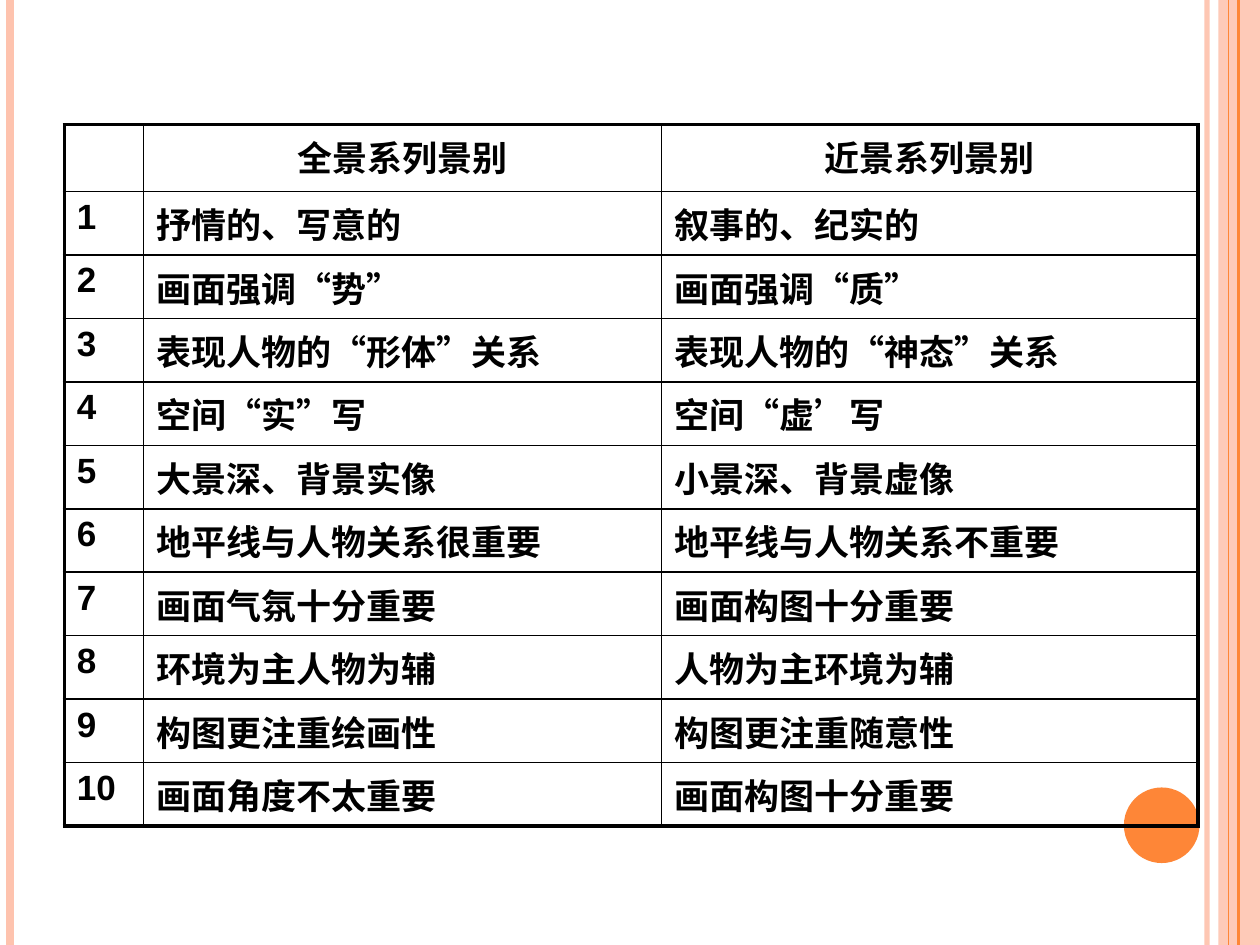
from lxml.etree import SubElement
from pptx import Presentation
from pptx.dml.color import RGBColor
from pptx.enum.lang import MSO_LANGUAGE_ID
from pptx.enum.shapes import MSO_CONNECTOR, MSO_SHAPE
from pptx.enum.text import PP_ALIGN
from pptx.oxml.ns import qn
from pptx.util import Inches, Pt

COLORS = {"peach": "FEC3AE", "orange": "FE8637", "black": "000000"}
THICK, THIN = 2.25, 1

presentation = Presentation()
presentation.slide_width, presentation.slide_height = Inches(10), Inches(7.5)
slide = presentation.slides.add_slide(presentation.slide_layouts[6])
slide_height = presentation.slide_height


def write(cell, text, size=20, color="black", bold=True, align=PP_ALIGN.LEFT):
    paragraph = cell.text_frame.paragraphs[0]
    paragraph.alignment = align
    run = paragraph.add_run()
    run.text = text
    font = run.font
    font.name, font.size, font.bold = "Arial", Pt(size), bold
    font.color.rgb = RGBColor.from_string(COLORS[color])
    font.language_id = MSO_LANGUAGE_ID.SIMPLIFIED_CHINESE


def set_alpha(element, percent):
    color = next(element.iter(qn("a:srgbClr")))
    SubElement(color, qn("a:alpha")).set("val", str(percent * 1000))


# Side stripes: x position, color, width, opacity
stripes = [
    (9.58, "peach", 3, 93),
    (0.08, "peach", 4.5, 100),
    (9.83, "orange", 1.5, 100),
    (9.75, "orange", 0.75, 100),
]
band = slide.shapes.add_shape(
    MSO_SHAPE.RECTANGLE, Inches(9.67), 0, Inches(0.33), slide_height)
circle = slide.shapes.add_shape(
    MSO_SHAPE.OVAL, Inches(8.92), Inches(6.25), Inches(0.6), Inches(0.6))
for shape, color in ((band, "peach"), (circle, "orange")):
    shape.shadow.inherit = False
    shape.fill.solid()
    shape.fill.fore_color.rgb = RGBColor.from_string(COLORS[color])
    shape.line.fill.background()
set_alpha(band.fill._xPr, 87)

for x, color, width, opacity in stripes:
    stripe = slide.shapes.add_connector(
        MSO_CONNECTOR.STRAIGHT, Inches(x), 0, Inches(x), slide_height)
    stripe.line.color.rgb = RGBColor.from_string(COLORS[color])
    stripe.line.width = Pt(width)
    if opacity < 100:
        set_alpha(stripe.line._ln, opacity)
    SubElement(stripe._element.spPr, qn("a:effectLst"))

# Comparison of wide and close shots
comparison = [
    ("全景系列景别", "近景系列景别"),
    ("抒情的、写意的", "叙事的、纪实的"),
    ("画面强调“势”", "画面强调“质”"),
    ("表现人物的“形体”关系", "表现人物的“神态”关系"),
    ("空间“实”写", "空间“虚’写"),
    ("大景深、背景实像", "小景深、背景虚像"),
    ("地平线与人物关系很重要", "地平线与人物关系不重要"),
    ("画面气氛十分重要", "画面构图十分重要"),
    ("环境为主人物为辅", "人物为主环境为辅"),
    ("构图更注重绘画性", "构图更注重随意性"),
    ("画面角度不太重要", "画面构图十分重要"),
]
column_widths = [0.63, 4.11, 4.26]
last_row, last_column = len(comparison) - 1, len(column_widths) - 1
table = slide.shapes.add_table(
    len(comparison), len(column_widths),
    Inches(0.51), Inches(0.99), Inches(9), Inches(5.03)).table
table.first_row = table.horz_banding = False
for column, width in zip(table.columns, column_widths):
    column.width = Inches(width)

for row_index, texts in enumerate(comparison):
    header = row_index == 0
    table.rows[row_index].height = Inches(0.53 if header else 0.45)
    number = "" if header else str(row_index)
    for column_index, text in enumerate((number, *texts)):
        cell = table.cell(row_index, column_index)
        if text:
            write(cell, text, align=PP_ALIGN.CENTER if header else PP_ALIGN.LEFT)
        # Thick outer frame, thin inner rules; borders come before the fill
        edges = {
            "a:lnL": column_index == 0,
            "a:lnR": column_index == last_column,
            "a:lnT": header,
            "a:lnB": row_index == last_row,
        }
        properties = cell._tc.get_or_add_tcPr()
        for tag, outer in edges.items():
            border = SubElement(properties, qn(tag))
            border.set("w", str(Pt(THICK if outer else THIN)))
            fill = SubElement(border, qn("a:solidFill"))
            SubElement(fill, qn("a:srgbClr")).set("val", COLORS["black"])
        cell.fill.background()

presentation.save("out.pptx")
